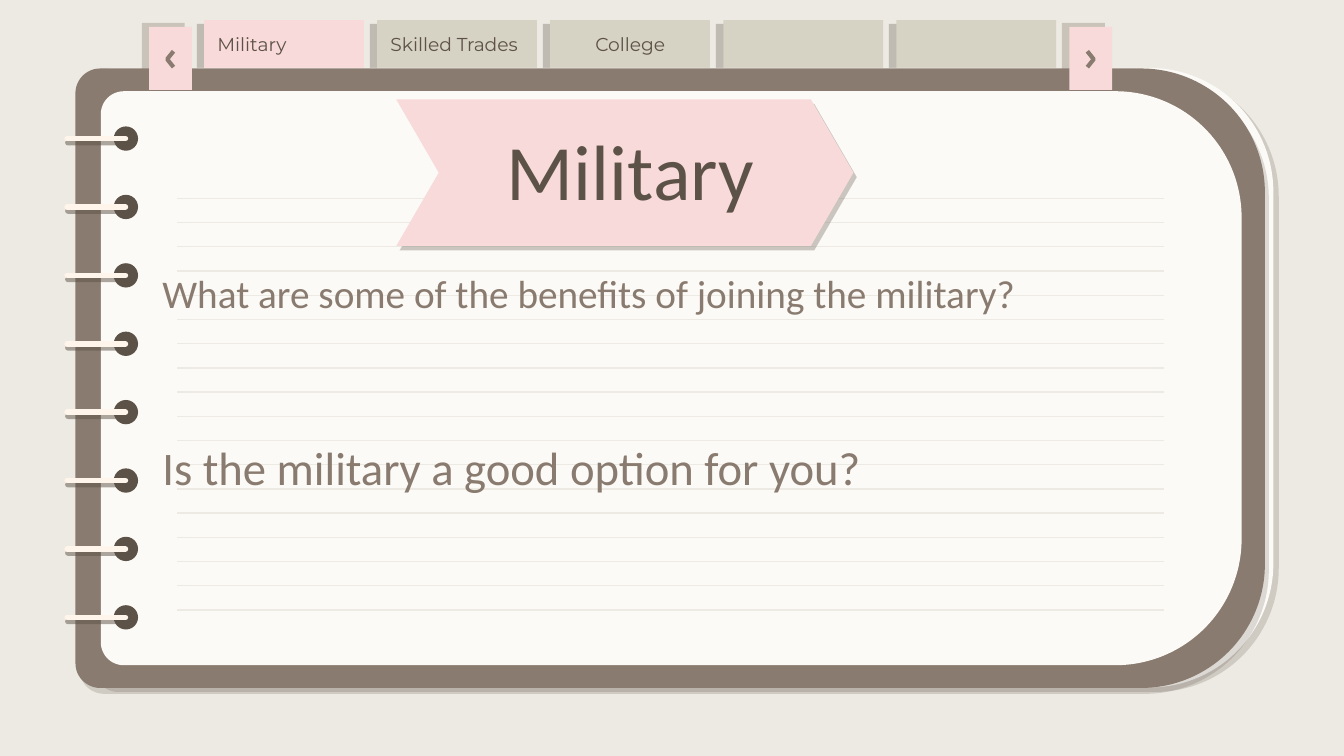
from lxml import etree
from pptx import Presentation
from pptx import util as u
from pptx.dml.color import RGBColor
from pptx.enum import shapes, text
from pptx.oxml.ns import qn

COLORS = {
    "background": "ECEAE3", "paper": "FCFAF6", "cover": "897B6F", "dark": "5D5247",
    "pink": "F7DAD9", "tab": "D6D2C4", "ring": "FFF5EA",
}
TAB_SHADOW = ("dark", 31, 4.5, 152)
SHEET_SHADOW = ("dark", 20, 3.8, 40)
COVER_SHADOW = ("dark", 20, 3.8, 56)
RING_SHADOW = ("dark", 50, 2.2, 80)
BANNER_SHADOW = ("dark", 31, 3, 53)
BUTTON_SHADOW = ("cover", 35, 4.5, 209)


class NotebookSlide:
    """Draws styled notebook elements on one slide, with lengths in centimetres."""

    def __init__(self, presentation):
        self.slide = presentation.slides.add_slide(presentation.slide_layouts[5])
        fill = self.slide.background.fill
        fill.solid()
        fill.fore_color.rgb = self.color("background")

    def color(self, name):
        return RGBColor.from_string(COLORS[name])

    def effects(self, shape, shadow):
        effects = etree.SubElement(shape.element.spPr, qn("a:effectLst"))
        if shadow:
            name, opacity, distance, angle = shadow
            outer = etree.SubElement(
                effects, qn("a:outerShdw"), dist=str(u.Pt(distance)),
                dir=str(angle * 60000), algn="bl", rotWithShape="0")
            tint = etree.SubElement(outer, qn("a:srgbClr"), val=COLORS[name])
            etree.SubElement(tint, qn("a:alpha"), val=str(opacity * 1000))

    def block(self, kind, box, fill, shadow=None, adjustments=(), rotation=0):
        shape = self.slide.shapes.add_shape(kind, *map(u.Cm, box))
        shape.rotation = rotation
        for index, value in enumerate(adjustments):
            shape.adjustments[index] = value
        shape.fill.solid()
        shape.fill.fore_color.rgb = self.color(fill)
        shape.line.fill.background()
        self.effects(shape, shadow)

    def rule(self, left, right, y, color, width, shadow=None, cap="flat"):
        line = self.slide.shapes.add_connector(
            shapes.MSO_CONNECTOR.STRAIGHT, u.Cm(left), u.Cm(y), u.Cm(right), u.Cm(y))
        line.line.color.rgb = self.color(color)
        line.line.width = u.Pt(width)
        line.element.spPr.find(qn("a:ln")).set("cap", cap)
        self.effects(line, shadow)

    def arrow(self, center, y, direction):
        back, tip = center - direction * 0.06, center + direction * 0.06
        points = [(u.Cm(back), u.Cm(y - 0.15)), (u.Cm(tip), u.Cm(y)),
                  (u.Cm(back), u.Cm(y + 0.15))]
        builder = self.slide.shapes.build_freeform(*points[0])
        builder.add_line_segments(points[1:], close=False)
        shape = builder.convert_to_shape()
        shape.fill.background()
        shape.line.color.rgb = self.color("cover")
        shape.line.width = u.Pt(2.25)
        self.effects(shape, None)

    def frame(self, shape, anchor, vertical_margin):
        frame = shape.text_frame
        frame.word_wrap = True
        frame.auto_size = text.MSO_AUTO_SIZE.NONE
        frame.vertical_anchor = anchor
        frame.margin_left = frame.margin_right = u.Cm(0.25)
        frame.margin_top = frame.margin_bottom = u.Cm(vertical_margin)
        return frame

    def style(self, paragraph, words, font, size, color, align=text.PP_ALIGN.LEFT):
        paragraph.text = words
        paragraph.alignment = align
        paragraph.font.name = font
        paragraph.font.size = u.Pt(size)
        paragraph.font.color.rgb = self.color(color)

    def label(self, box, words, align):
        shape = self.slide.shapes.add_textbox(*map(u.Cm, box))
        frame = self.frame(shape, text.MSO_ANCHOR.MIDDLE, 0)
        self.style(frame.paragraphs[0], words, "Montserrat", 10, "dark", align)

    def questions(self, box, items):
        shape = self.slide.shapes.add_textbox(*map(u.Cm, box))
        frame = self.frame(shape, text.MSO_ANCHOR.TOP, 0)
        for index, (words, size, space) in enumerate(items):
            paragraph = frame.add_paragraph() if index else frame.paragraphs[0]
            self.style(paragraph, words, "Calibri", size, "cover")
            paragraph.line_spacing = 1.15
            paragraph.space_before = u.Pt(space)

    def title(self, box, words):
        title = self.slide.shapes.title
        title.left, title.top, title.width, title.height = map(u.Cm, box)
        frame = self.frame(title, text.MSO_ANCHOR.BOTTOM, 0.25)
        self.style(frame.paragraphs[0], words, "Calibri", 42, "dark", text.PP_ALIGN.CENTER)
        title.element.getparent().append(title.element)


def main():
    presentation = Presentation()
    presentation.slide_width, presentation.slide_height = u.Cm(25.4), u.Cm(14.29)
    notebook = NotebookSlide(presentation)
    kinds = shapes.MSO_SHAPE
    tab_lefts = [3.86 + 3.27 * index for index in range(5)]

    for index, left in enumerate(tab_lefts):
        notebook.block(kinds.RECTANGLE, (left, 0.38, 3.02, 0.94),
                       "tab" if index else "pink", TAB_SHADOW)

    for box, fill, shadow, corner in [
        ((7.01, -4.06, 11.71, 22.4), "paper", SHEET_SHADOW, 0.2),
        ((6.81, -4.09, 11.71, 22.48), "cover", COVER_SHADOW, 0.2),
        ((7.26, -3.63, 10.85, 21.56), "paper", None, 0.22),
    ]:
        notebook.block(kinds.ROUND_2_SAME_RECTANGLE, box, fill, shadow, (corner, 0.04), 90)

    for index in range(8):
        y = 2.62 + 9.05 * index / 7
        notebook.block(kinds.OVAL, (2.15, y - 0.23, 0.46, 0.46), "dark")
        notebook.rule(1.27, 2.37, y, "ring", 3, RING_SHADOW, "rnd")

    for index in range(18):
        notebook.rule(3.35, 22, 3.75 + 7.78 * index / 17, "background", 0.75)

    notebook.questions((2.82, 4.95, 20.9, 4.6), [
        ("What are some of the benefits of joining the military?", 21, 0),
        ("Is the military a good option for you?", 25, 61.5),
    ])
    notebook.block(kinds.CHEVRON, (7.49, 1.88, 8.64, 2.77), "pink", BANNER_SHADOW, (0.29,))

    for left, direction in [(20.21, 1), (2.82, -1)]:
        notebook.block(kinds.RECTANGLE, (left, 0.51, 0.81, 1.19), "pink", BUTTON_SHADOW)
        notebook.arrow(left + 0.4, 1.12, direction)

    aligns = text.PP_ALIGN
    for left, words, align in zip(tab_lefts, ["Military", "Skilled Trades", "College"],
                                  [aligns.LEFT, aligns.LEFT, aligns.CENTER]):
        notebook.label((left, 0.36, 3.02, 0.94), words, align)

    notebook.title((6.3, 2.16, 11.23, 2.18), "Military")
    presentation.save("out.pptx")


if __name__ == "__main__":
    main()
